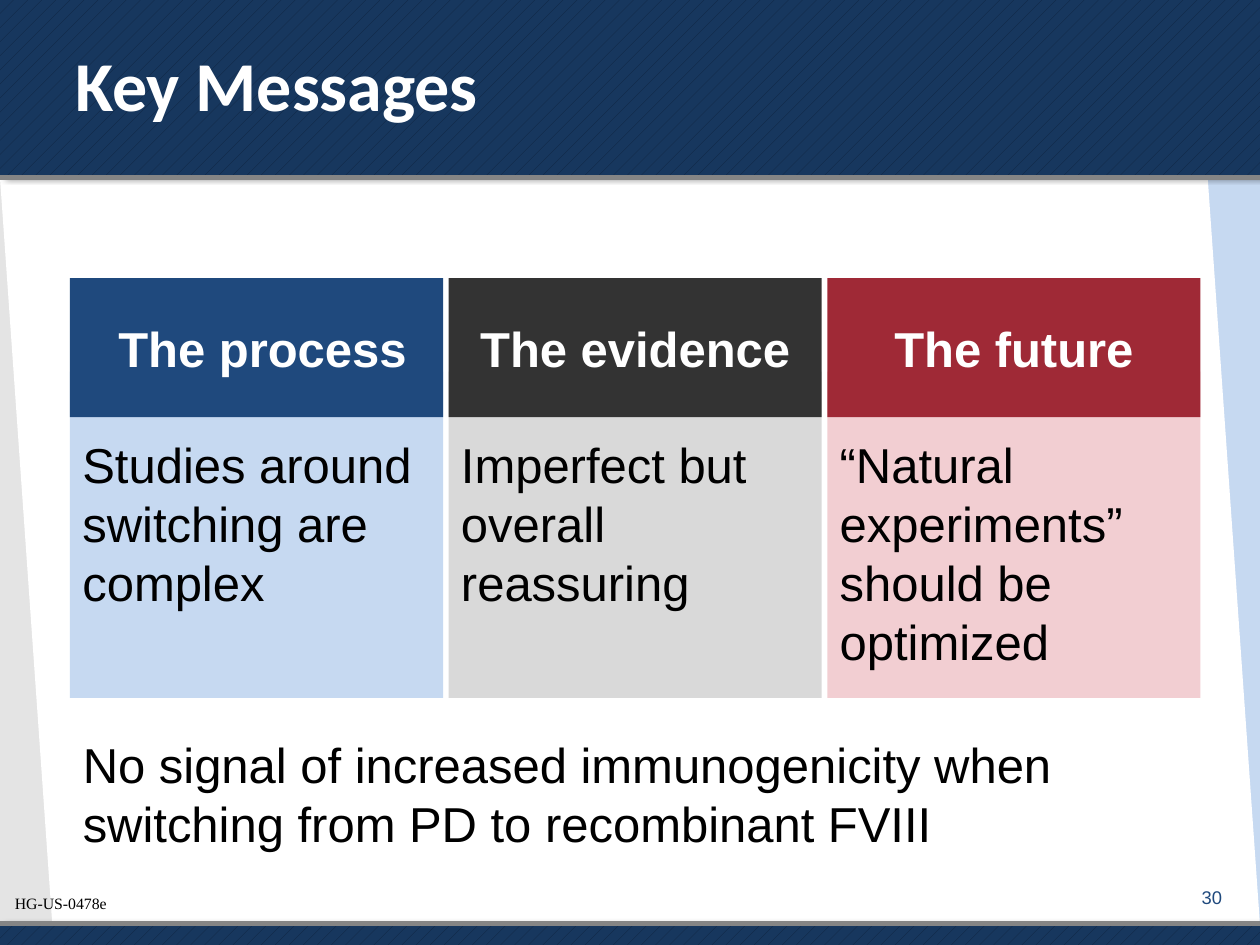
from dataclasses import dataclass

from lxml.etree import SubElement
from pptx import Presentation
from pptx.dml.color import RGBColor
from pptx.enum.dml import MSO_PATTERN
from pptx.enum.shapes import MSO_CONNECTOR, MSO_SHAPE
from pptx.enum.text import MSO_ANCHOR, PP_ALIGN
from pptx.oxml.ns import qn
from pptx.util import Cm, Pt


@dataclass(frozen=True)
class Theme:
    navy: str = "17375E"
    navy_dark: str = "0F243E"
    blue: str = "1F497D"
    blue_light: str = "C6D9F1"
    charcoal: str = "333333"
    grey_light: str = "D9D9D9"
    red: str = "9F2936"
    red_light: str = "F2CED2"
    edge_grey: str = "E4E4E4"
    rule_grey: str = "858585"
    white: str = "FFFFFF"
    black: str = "000000"
    title_size: float = 40
    text_size: float = 28
    number_size: float = 10.5
    code_size: float = 9


THEME = Theme()
PAGE_WIDTH, PAGE_HEIGHT = 25.4, 19.05
COLUMNS = [
    ("The process", "Studies around switching are complex",
     THEME.blue, THEME.blue_light, 0.24),
    ("The evidence", "Imperfect but overall reassuring",
     THEME.charcoal, THEME.grey_light, 0),
    ("The future", "“Natural experiments” should be optimized",
     THEME.red, THEME.red_light, 0),
]


def color(value):
    return RGBColor.from_string(value)


def add_panel(page, box, fill, kind=MSO_SHAPE.RECTANGLE):
    """Add a borderless shape; box is left, top, width, height in cm."""
    panel = page.shapes.add_shape(kind, *map(Cm, box))
    panel.shadow.inherit = False
    panel.fill.solid()
    panel.fill.fore_color.rgb = color(fill)
    panel.line.fill.background()
    return panel


def write_text(shape, text, *, size=THEME.text_size, font="Arial", ink=THEME.black,
               bold=False, align=PP_ALIGN.LEFT, anchor=MSO_ANCHOR.TOP, wrap=True,
               left=0.25, top=0.13, after=0, spacing=None):
    frame = shape.text_frame
    frame.word_wrap = wrap
    frame.vertical_anchor = anchor
    frame.margin_left, frame.margin_top = Cm(left), Cm(top)
    frame.margin_right, frame.margin_bottom = Cm(0.25), Cm(0.13)
    para = frame.paragraphs[0]
    para.alignment = align
    para.space_after = Pt(after)
    para.line_spacing = spacing
    span = para.add_run()
    span.text = text
    span.font.name, span.font.size, span.font.bold = font, Pt(size), bold
    span.font.color.rgb = color(ink)


def add_text(page, box, text, **style):
    write_text(page.shapes.add_textbox(*map(Cm, box)), text, **style)


def add_band(page, box):
    """Patterned navy band with a soft shadow."""
    band = add_panel(page, box, THEME.navy)
    band.fill.patterned()
    band.fill.pattern = MSO_PATTERN.PERCENT_10
    band.fill.fore_color.rgb = color(THEME.navy_dark)
    band.fill.back_color.rgb = color(THEME.navy)
    effects = band.element.spPr.find(qn("a:effectLst"))
    shadow = SubElement(effects, qn("a:outerShdw"), blurRad=str(Pt(4)),
                        dist=str(Pt(3)), dir="0", algn="l", rotWithShape="0")
    tint = SubElement(shadow, qn("a:srgbClr"), val=THEME.black)
    SubElement(tint, qn("a:alpha"), val="40000")


def add_rule(page, top):
    rule = page.shapes.add_connector(
        MSO_CONNECTOR.STRAIGHT, 0, Cm(top), Cm(PAGE_WIDTH), Cm(top))
    rule.line.color.rgb = color(THEME.rule_grey)
    rule.line.width = Pt(3)
    SubElement(rule.element.spPr, qn("a:effectLst"))


def add_backdrop(page, box):
    """Gradient page, slanted white sheet, bands and rules."""
    left, top, width, height = box
    fill = page.background.fill
    fill.gradient()
    fill.gradient_angle = 0
    for stop, tint in zip(fill.gradient_stops, (THEME.edge_grey, THEME.blue_light)):
        stop.color.rgb = color(tint)

    sheet = add_panel(page, (left, top + 3.56, width, 15.06), THEME.white,
                      MSO_SHAPE.PARALLELOGRAM)
    sheet.adjustments[0] = 0.07
    sheet.element.spPr.xfrm.set("flipH", "1")

    add_band(page, (left, top, width, 3.58))
    add_band(page, (left, top + height - 0.41, width, 0.41))
    for offset in (3.58, height - 0.43):
        add_rule(page, top + offset)


def add_columns(page, box, gap=0.11, header_height=2.8):
    """Equal columns, each a text panel below a coloured header."""
    left, top, width, height = box
    column_width = (width - gap * (len(COLUMNS) - 1)) / len(COLUMNS)
    overlap = 0.92
    body_top = top + header_height - overlap
    for index, (heading, message, dark, light, indent) in enumerate(COLUMNS):
        x = left + index * (column_width + gap)
        body = add_panel(page, (x, body_top, column_width, top + height - body_top), light)
        write_text(body, message, top=1.27)
        header = add_panel(page, (x, top, column_width, header_height), dark)
        write_text(header, heading, ink=THEME.white, bold=True, align=PP_ALIGN.CENTER,
                   anchor=MSO_ANCHOR.MIDDLE, left=0.25 + indent, after=12)


def add_footer(page, box):
    """Document code on the left, page number on the right."""
    left, top, width, _ = box
    add_text(page, (left + 0.05, top + 0.15, 2.4, 0.64), "HG-US-0478e",
             size=THEME.code_size, font="Times New Roman", wrap=False)
    add_text(page, (left + width - 1.57, top, 1.2, 1.14), "30",
             size=THEME.number_size, ink=THEME.blue, align=PP_ALIGN.CENTER)


def main():
    deck = Presentation()
    deck.slide_width, deck.slide_height = Cm(PAGE_WIDTH), Cm(PAGE_HEIGHT)
    page = deck.slides.add_slide(deck.slide_layouts[6])

    add_backdrop(page, (0, 0, PAGE_WIDTH, PAGE_HEIGHT))
    add_text(page, (1.27, 0.41, 22.86, 2.26), "Key Messages", size=THEME.title_size,
             font="Calibri", ink=THEME.white, bold=True, anchor=MSO_ANCHOR.BOTTOM,
             spacing=0.85)
    add_columns(page, (1.41, 5.61, 22.79, 8.46))
    add_text(page, (1.42, 14.68, 22.7, 2.64),
             "No signal of increased immunogenicity when switching from PD "
             "to recombinant FVIII")
    add_footer(page, (0, 17.73, PAGE_WIDTH, 1.14))

    deck.save("out.pptx")


if __name__ == "__main__":
    main()
